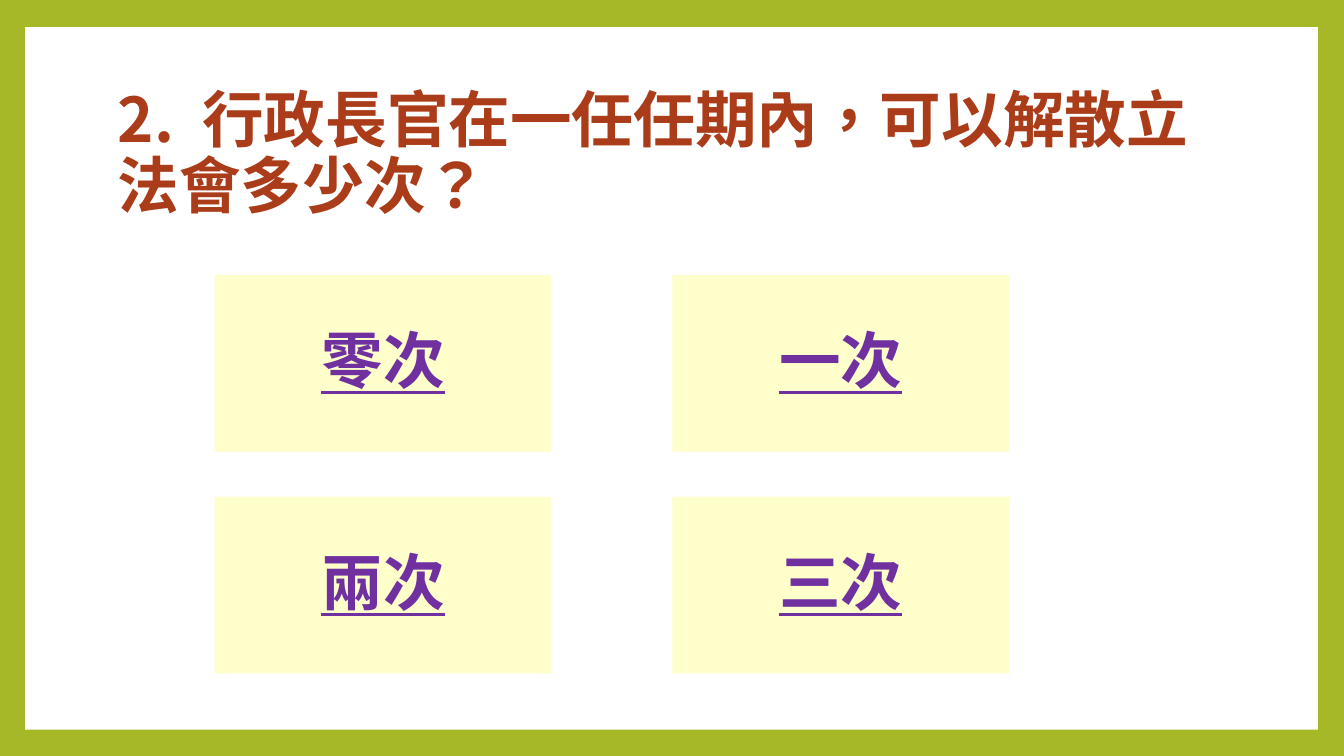
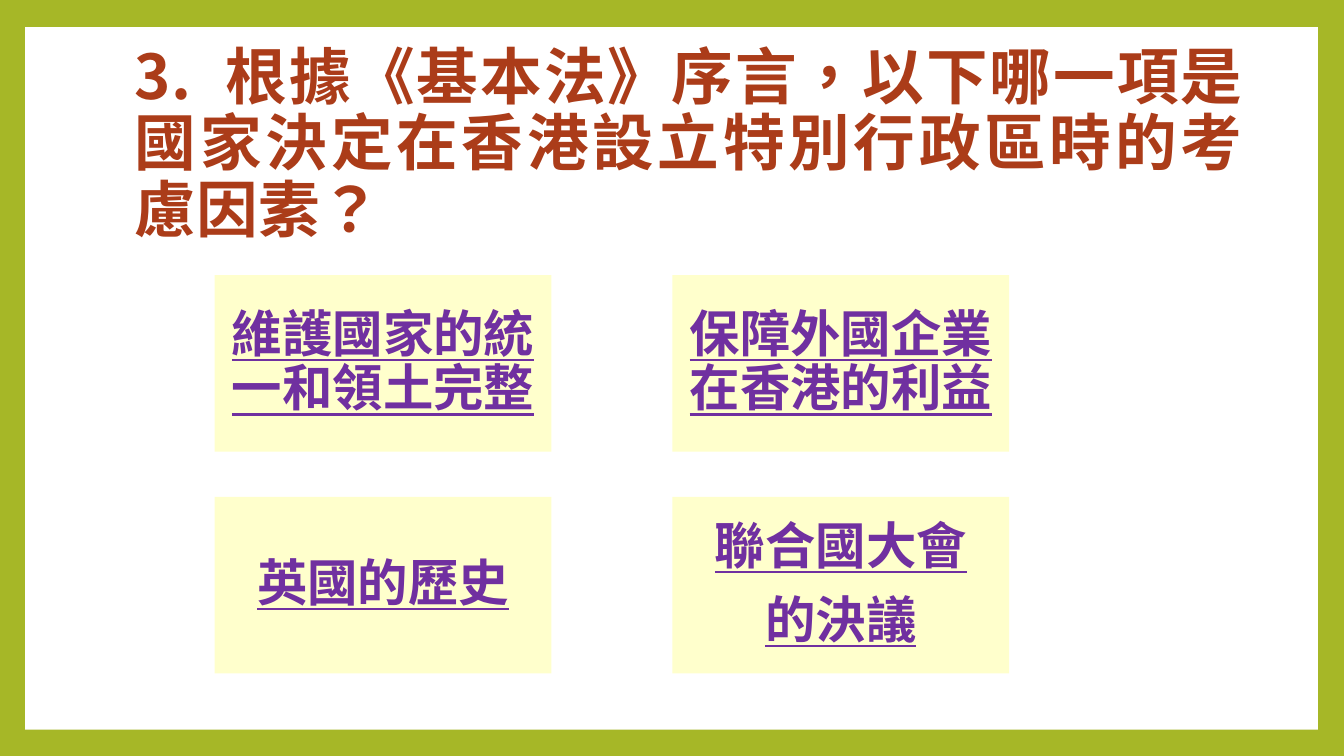
from dataclasses import dataclass

from lxml import etree
from pptx import Presentation
from pptx import util as u
from pptx.dml import color
from pptx.enum import lang, shapes, text
from pptx.oxml import ns


@dataclass(frozen=True)
class Theme:
    border: str = "A6B727"
    panel: str = "FFFFFF"
    card: str = "FFFFCC"
    question: str = "AB3C19"
    answer: str = "7030A0"
    cjk_font: str = "Noto Sans CJK SC"
    large: int = 44
    medium: int = 36
    line_spacing: float = 0.9
    space_before: int = 14


THEME = Theme()
PANEL_BOX = (0.25, 0.27, 12.82, 6.97)
GRID_BOX = (2.13, 2.73, 7.88, 3.95)
CARD_SIZE = (3.34, 1.75)
COLUMNS = 2

# Each answer is a list of paragraphs; answers run row by row
QUESTIONS = [
    {
        "box": (1.07, 0.72, 11.37, 1.65),
        "title": [("2.  ", THEME.cjk_font),
                  ("行政長官在一任任期內，可以解散立法會多少次？", "Calibri")],
        "align": text.PP_ALIGN.LEFT,
        "answers": [["零次"], ["一次"], ["兩次"], ["三次"]],
        "answer_font": "Arial",
        "answer_size": THEME.large,
    },
    {
        "box": (1.24, 0.62, 11.19, 1.65),
        "title": [("3.  根據《基本法》序言，以下哪一項是國家決定在香港設立特別行政區時的考慮因素？",
                   THEME.cjk_font)],
        "align": text.PP_ALIGN.JUSTIFY,
        "answers": [["維護國家的統一和領土完整"], ["保障外國企業在香港的利益"],
                    ["英國的歷史"], ["聯合國大會", "的決議"]],
        "answer_font": "Calibri",
        "answer_size": THEME.medium,
    },
]


def inches(box):
    return [u.Inches(length) for length in box]


def add_rectangle(slide, box, fill):
    shape = slide.shapes.add_shape(shapes.MSO_SHAPE.RECTANGLE, *inches(box))
    shape.shadow.inherit = False
    shape.fill.solid()
    shape.fill.fore_color.rgb = color.RGBColor.from_string(fill)
    shape.line.fill.background()
    return shape


def set_up_frame(frame):
    frame.word_wrap = True
    frame.vertical_anchor = text.MSO_ANCHOR.MIDDLE


def format_paragraph(paragraph, align):
    paragraph.alignment = align
    paragraph.line_spacing = THEME.line_spacing


def add_run(paragraph, words, font_name, size, rgb, underline=False):
    run = paragraph.add_run()
    run.text = words
    font = run.font
    font.name = font_name
    font.size = u.Pt(size)
    font.bold = True
    if underline:
        font.underline = True
    font.color.rgb = color.RGBColor.from_string(rgb)
    font.language_id = lang.MSO_LANGUAGE_ID.CHINESE_HONG_KONG_SAR
    # East Asian typeface follows the Latin one
    latin = run._r.rPr.find(ns.qn("a:latin"))
    east_asian = etree.Element(ns.qn("a:ea"), typeface=THEME.cjk_font)
    latin.addnext(east_asian)


def add_question(slide, box, runs, align):
    frame = slide.shapes.add_textbox(*inches(box)).text_frame
    set_up_frame(frame)
    paragraph = frame.paragraphs[0]
    format_paragraph(paragraph, align)
    for words, font_name in runs:
        add_run(paragraph, words, font_name, THEME.large, THEME.question)


def add_answer_card(slide, box, lines, font_name, size):
    frame = add_rectangle(slide, box, THEME.card).text_frame
    set_up_frame(frame)
    for index, line in enumerate(lines):
        paragraph = frame.add_paragraph() if index else frame.paragraphs[0]
        format_paragraph(paragraph, text.PP_ALIGN.CENTER)
        paragraph.space_before = u.Pt(THEME.space_before)
        add_run(paragraph, line, font_name, size, THEME.answer, underline=True)


def add_answer_grid(slide, box, answers, font_name, size):
    left, top, width, height = box
    card_width, card_height = CARD_SIZE
    # The outer cards touch the edges of the grid
    step_x = (width - card_width) / (COLUMNS - 1)
    step_y = (height - card_height) / (len(answers) // COLUMNS - 1)
    for index, lines in enumerate(answers):
        row, column = divmod(index, COLUMNS)
        card_box = (left + column * step_x, top + row * step_y, *CARD_SIZE)
        add_answer_card(slide, card_box, lines, font_name, size)


def add_quiz_slide(presentation, question):
    slide = presentation.slides.add_slide(presentation.slide_layouts[6])
    add_rectangle(slide, PANEL_BOX, THEME.panel)
    add_question(slide, question["box"], question["title"], question["align"])
    add_answer_grid(slide, GRID_BOX, question["answers"],
                    question["answer_font"], question["answer_size"])


def main():
    presentation = Presentation()
    presentation.slide_width = u.Inches(13.33)
    presentation.slide_height = u.Inches(7.5)
    # The green border is the shared background around the panel
    background = presentation.slide_master.background.fill
    background.solid()
    background.fore_color.rgb = color.RGBColor.from_string(THEME.border)
    for question in QUESTIONS:
        add_quiz_slide(presentation, question)
    presentation.save("out.pptx")


if __name__ == "__main__":
    main()
